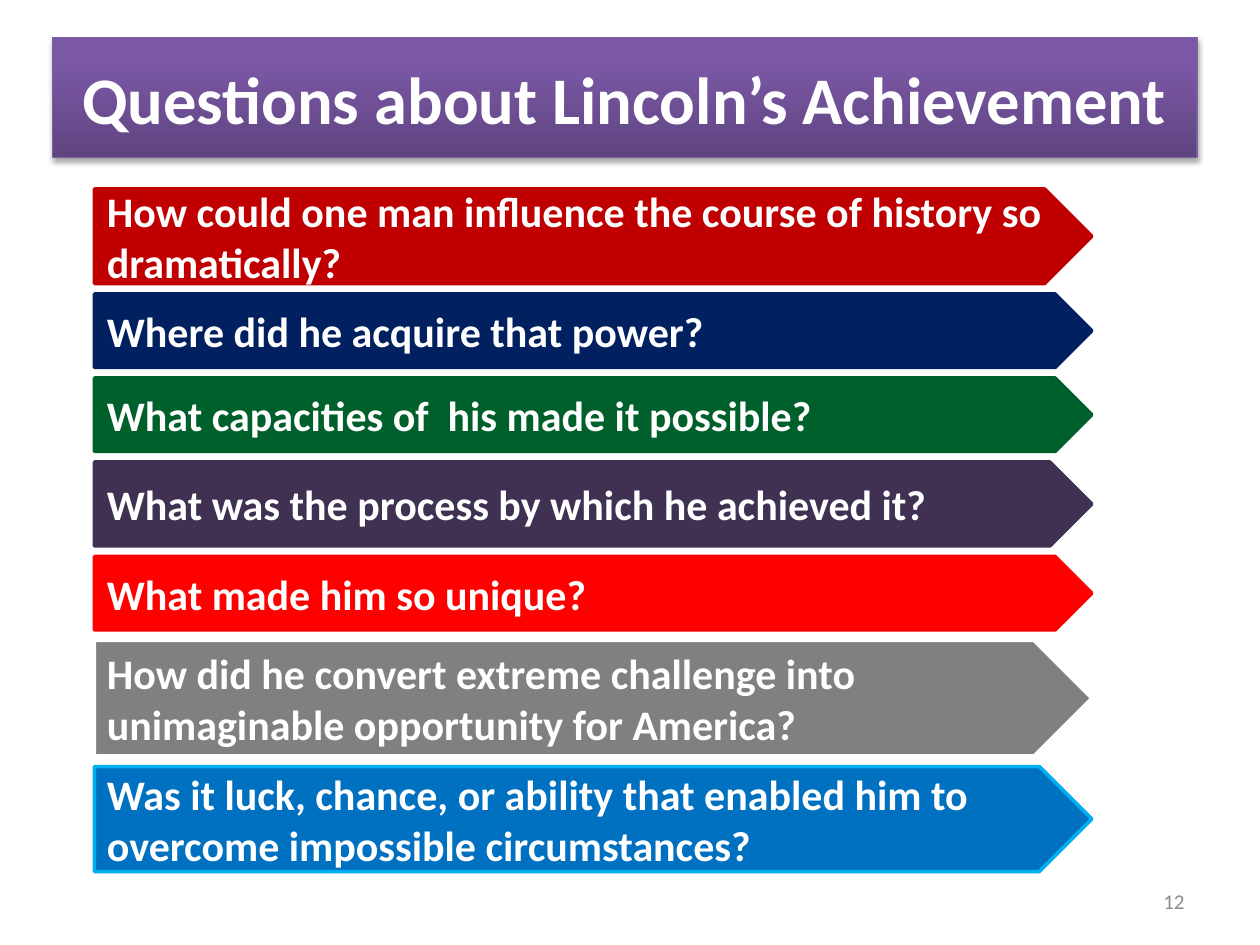
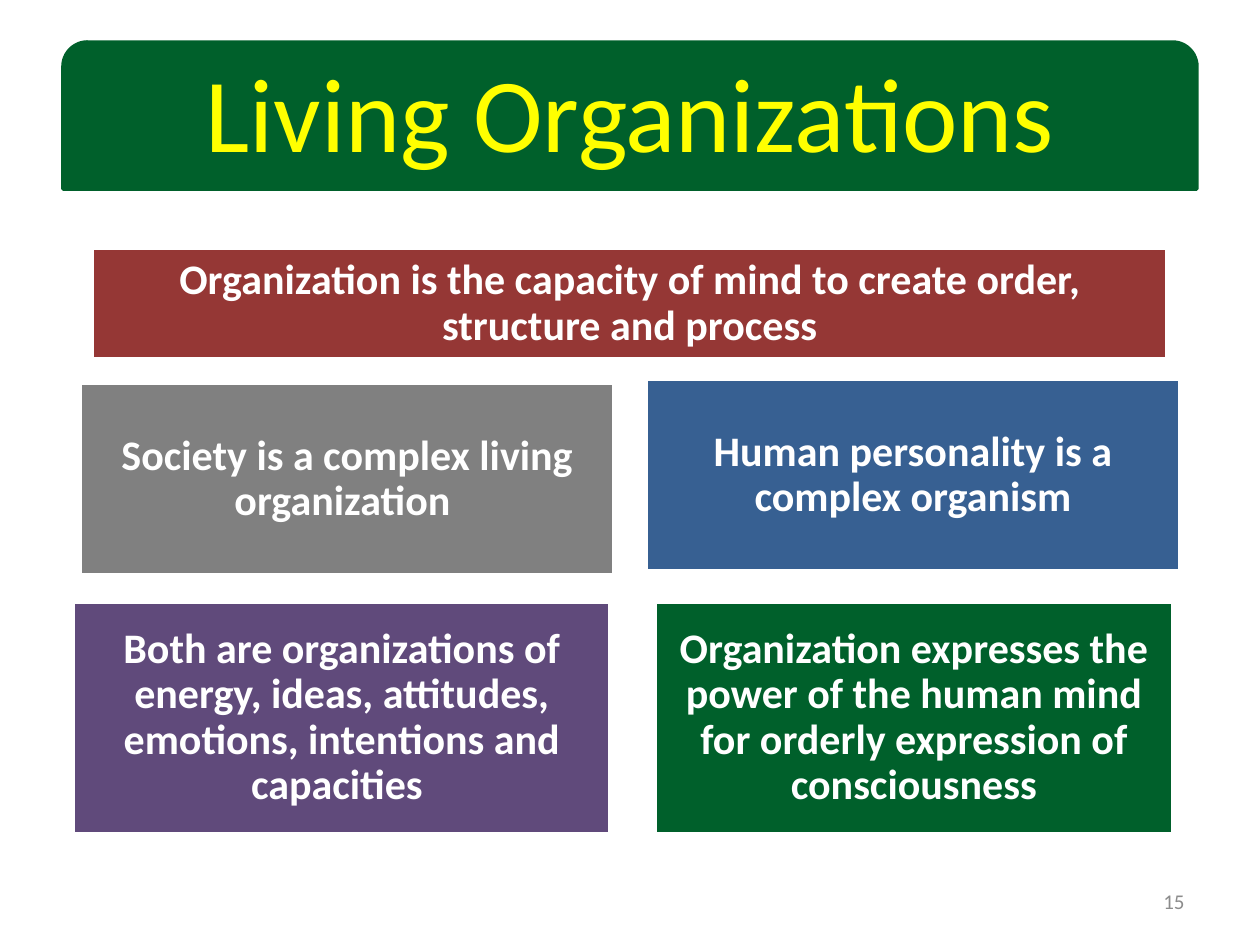
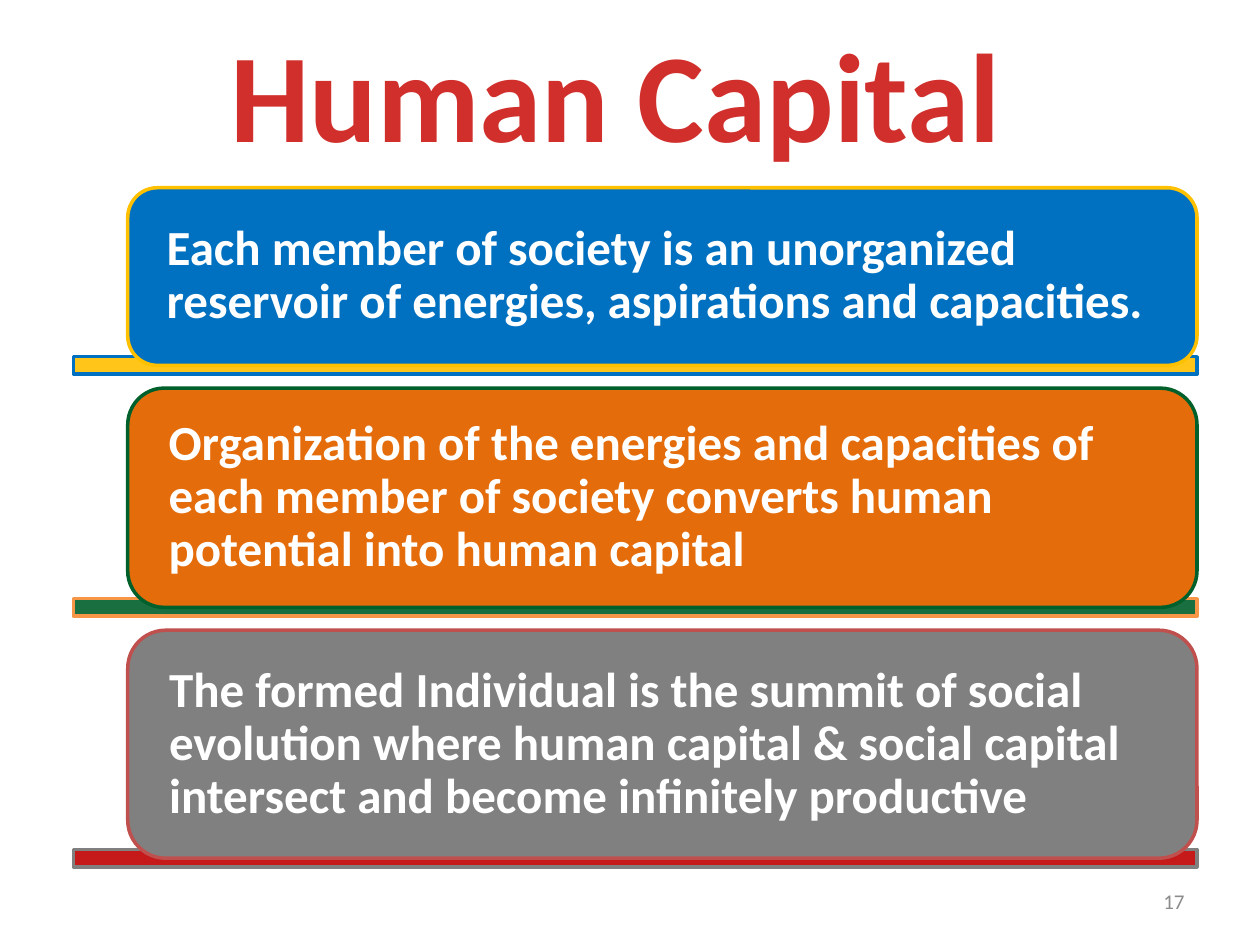
from dataclasses import dataclass

from lxml import etree
from pptx import Presentation
from pptx.dml.color import RGBColor
from pptx.enum.shapes import MSO_SHAPE
from pptx.enum.text import MSO_ANCHOR, MSO_AUTO_SIZE, PP_ALIGN
from pptx.oxml.ns import qn
from pptx.util import Pt

RECT = MSO_SHAPE.RECTANGLE
ROUNDED = MSO_SHAPE.ROUNDED_RECTANGLE
TOP_ROUNDED = MSO_SHAPE.ROUND_2_SAME_RECTANGLE
PENTAGON = MSO_SHAPE.PENTAGON
LEFT, CENTER, RIGHT = PP_ALIGN.LEFT, PP_ALIGN.CENTER, PP_ALIGN.RIGHT
TOP, MIDDLE = MSO_ANCHOR.TOP, MSO_ANCHOR.MIDDLE
TITLE_ONLY = 5


@dataclass(frozen=True)
class Theme:
    font: str = "Calibri"
    white: str = "FFFFFF"
    green: str = "00602B"
    navy: str = "002060"
    blue: str = "0070C0"
    sky: str = "00B0F0"
    steel: str = "376092"
    gray: str = "808080"
    number: str = "8C8C8C"
    crimson: str = "C00000"
    red: str = "FF0000"
    brick: str = "953735"
    rose: str = "C0504D"
    title_red: str = "D02F2C"
    plum: str = "403152"
    purple: str = "604A7B"
    purple_dark: str = "5F4480"
    purple_light: str = "7B58A6"
    purple_line: str = "7D60A0"
    orange: str = "E46C0A"
    peach: str = "F79646"
    gold: str = "FFC000"
    yellow: str = "FFFF00"
    number_size: float = 12
    box_size: float = 24
    card_size: float = 28
    line: float = 2


@dataclass(frozen=True)
class Box:
    x: float
    y: float
    w: float
    h: float


@dataclass(frozen=True)
class Style:
    size: float
    color: str
    bold: bool = True
    align: PP_ALIGN = LEFT
    anchor: MSO_ANCHOR = MIDDLE
    spacing: float = 1.0


@dataclass(frozen=True)
class Arrow:
    text: str
    h: float
    fill: str
    line: str


@dataclass(frozen=True)
class Tile:
    text: str
    box: Box
    fill: str


@dataclass(frozen=True)
class Card:
    text: str
    h: float
    fill: str
    line: str
    bar_fill: str
    bar_line: str


T = Theme()
ARROW_TEXT = Style(T.box_size, T.white)
TILE_TEXT = Style(T.box_size, T.white, align=CENTER, spacing=0.9)
CARD_TEXT = Style(T.card_size, T.white, spacing=0.9)
NUMBER_TEXT = Style(T.number_size, T.number, bold=False, align=RIGHT)
NUMBER_BOX = Box(516, 500.5, 168, 28.75)


# Shared drawing functions
def rgb(color: str) -> RGBColor:
    return RGBColor.from_string(color)


def write(shape, text: str, style: Style, insets=(7.2, 3.6), wrap: bool = True) -> None:
    tf = shape.text_frame
    tf.auto_size = MSO_AUTO_SIZE.NONE
    tf.word_wrap = wrap
    tf.vertical_anchor = style.anchor
    tf.margin_left = tf.margin_right = Pt(insets[0])
    tf.margin_top = tf.margin_bottom = Pt(insets[1])
    p = tf.paragraphs[0]
    p.alignment = style.align
    p.line_spacing = style.spacing
    r = p.add_run()
    r.text = text
    r.font.name = T.font
    r.font.size = Pt(style.size)
    r.font.bold = style.bold
    r.font.color.rgb = rgb(style.color)


def add_panel(s, kind: MSO_SHAPE, box: Box, fill: str, line: str):
    sp = s.shapes.add_shape(kind, Pt(box.x), Pt(box.y), Pt(box.w), Pt(box.h))
    sp.shadow.inherit = False
    sp.fill.solid()
    sp.fill.fore_color.rgb = rgb(fill)
    sp.line.color.rgb = rgb(line)
    sp.line.width = Pt(T.line)
    return sp


def add_slide(prs, number: str, title: str, box: Box, style: Style, wrap: bool = True):
    s = prs.slides.add_slide(prs.slide_layouts[TITLE_ONLY])
    sp = s.shapes.title
    sp.left, sp.top, sp.width, sp.height = Pt(box.x), Pt(box.y), Pt(box.w), Pt(box.h)
    write(sp, title, style, wrap=wrap)
    n = NUMBER_BOX
    tb = s.shapes.add_textbox(Pt(n.x), Pt(n.y), Pt(n.w), Pt(n.h))
    write(tb, number, NUMBER_TEXT)
    return s


def add_glossy_fill(sp) -> None:
    """Purple gradient, dark at the foot, with a soft shadow below."""
    sp.fill.gradient()
    sp.fill.gradient_angle = 90
    stops = zip(sp.fill.gradient_stops, ((0, T.purple_dark), (0.8, T.purple_light)))
    for stop, (position, color) in stops:
        stop.position = position
        stop.color.rgb = rgb(color)
    sp.line.color.rgb = rgb(T.purple_line)
    sp.line.width = Pt(0.75)
    sp.shadow.inherit = False
    effects = sp.element.spPr.find(qn("a:effectLst"))
    shadow = etree.SubElement(effects, qn("a:outerShdw"), blurRad=str(Pt(3.1)),
                              dist=str(Pt(1.8)), dir="5400000", rotWithShape="0")
    color = etree.SubElement(shadow, qn("a:srgbClr"), val="000000")
    etree.SubElement(color, qn("a:alpha"), val="35000")


def set_opacity(sp, percent: int) -> None:
    color = sp.element.spPr.find(qn("a:solidFill")).find(qn("a:srgbClr"))
    etree.SubElement(color, qn("a:alpha"), val=str(percent * 1000))


# Slide: questions as a stack of arrows
ARROWS = (
    Arrow("How could one man influence the course of history so dramatically?",
          54, T.crimson, T.crimson),
    Arrow("Where did he acquire that power?", 42, T.navy, T.navy),
    Arrow("What capacities of  his made it possible?", 42, T.green, T.green),
    Arrow("What was the process by which he achieved it?", 48, T.plum, T.plum),
    Arrow("What made him so unique?", 42, T.red, T.red),
    Arrow("How did he convert extreme challenge into unimaginable opportunity for America?",
          66, T.gray, T.white),
    Arrow("Was it luck, chance, or ability that enabled him to overcome impossible circumstances?",
          60, T.blue, T.sky),
)


def questions_slide(prs) -> None:
    s = add_slide(prs, "12", "Questions about Lincoln’s Achievement",
                  Box(30, 21.6, 654, 68.4), Style(38, T.white, align=CENTER))
    add_glossy_fill(s.shapes.title)
    y, gap = 108, 6
    for arrow in ARROWS:
        sp = add_panel(s, PENTAGON, Box(54, y, 570, arrow.h), arrow.fill, arrow.line)
        write(sp, arrow.text, ARROW_TEXT)
        y += arrow.h + gap


# Slide: tiles under a green title band
TILES = (
    Tile("Organization is the capacity of mind to create order, structure and process",
         Box(52.75, 142, 614.25, 63.25), T.brick),
    Tile("Society is a complex living organization ",
         Box(46, 219.25, 304.75, 109), T.gray),
    Tile("Human personality is a complex organism",
         Box(369.25, 217, 305, 109), T.steel),
    Tile("Both are organizations of energy, ideas, attitudes, emotions, "
         "intentions and capacities ",
         Box(42, 344, 306.5, 132.5), T.purple),
    Tile("Organization expresses the power of the human mind for orderly "
         "expression of consciousness",
         Box(374.25, 344, 296, 132.5), T.green),
)


def organizations_slide(prs) -> None:
    s = add_slide(prs, "15", "Living Organizations", Box(36, 18, 648, 90),
                  Style(60, T.yellow, bold=False, align=CENTER))
    band = add_panel(s, TOP_ROUNDED, Box(36, 24, 648, 84), T.green, T.green)
    s.shapes.title.element.addprevious(band.element)
    for tile in TILES:
        sp = add_panel(s, RECT, tile.box, tile.fill, T.white)
        write(sp, tile.text, TILE_TEXT, insets=(7.2, 7.2))


# Slide: cards, each resting on a thin bar
CARDS = (
    Card("Each member of society is an unorganized reservoir of energies, "
         "aspirations and capacities.",
         101.5, T.blue, T.gold, T.gold, T.blue),
    Card("Organization of the energies and capacities of each member of society "
         "converts human potential into human capital",
         125.3, T.orange, T.green, T.green, T.peach),
    Card("The formed Individual is the summit of social evolution where human capital "
         "& social capital intersect and become infinitely productive",
         130.3, T.gray, T.rose, T.crimson, T.gray),
)


def capital_slide(prs) -> None:
    s = add_slide(prs, "17", "Human Capital ", Box(122.4, 6, 475.2, 94.5),
                  Style(72, T.title_red, align=CENTER, anchor=TOP), wrap=False)
    y, gap, bar_h = 107.3, 13, 10
    for card in CARDS:
        bar_box = Box(42, y + card.h - bar_h / 2, 642, bar_h)
        bar = add_panel(s, RECT, bar_box, card.bar_fill, card.bar_line)
        set_opacity(bar, 90)
        sp = add_panel(s, ROUNDED, Box(73, y, 611, card.h), card.fill, card.line)
        write(sp, card.text, CARD_TEXT, insets=(17.25, 0))
        y += card.h + gap


def main() -> None:
    prs = Presentation()
    prs.slide_width, prs.slide_height = Pt(720), Pt(540)
    questions_slide(prs)
    organizations_slide(prs)
    capital_slide(prs)
    prs.save("out.pptx")


if __name__ == "__main__":
    main()
